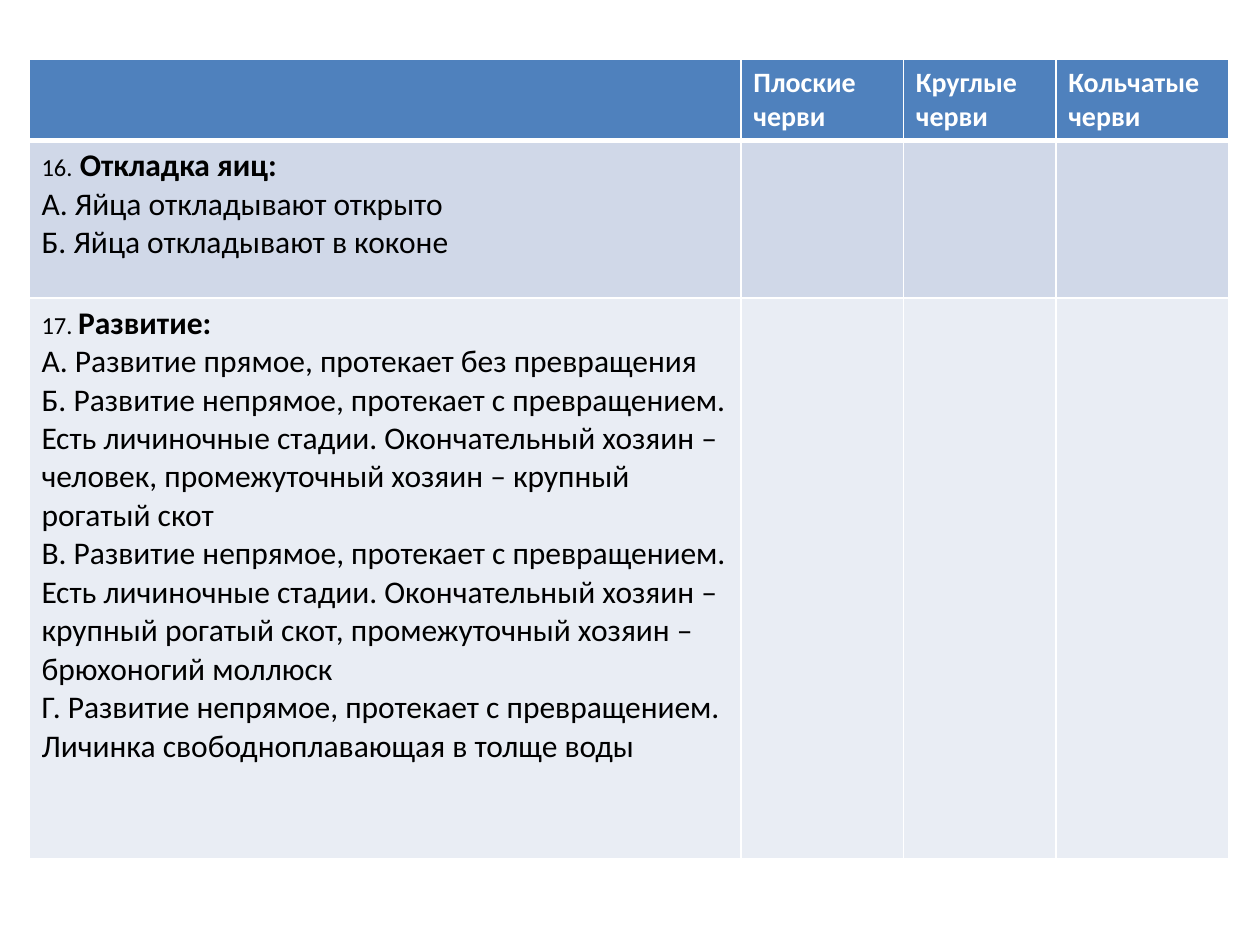
import pptx
import pptx.dml.color
import pptx.oxml
import pptx.oxml.ns
import pptx.util
from pptx.util import Inches


def colour(hex_code):
    return pptx.dml.color.RGBColor.from_string(hex_code)


class WormSlide:
    FONT = "Calibri"
    WHITE, BLACK = "FFFFFF", "000000"
    HEADER, ODD_BAND, EVEN_BAND = "4F81BD", "D0D8E8", "E9EDF4"

    def __init__(self, presentation):
        self.slide = presentation.slides.add_slide(presentation.slide_layouts[6])

    def table(self, left, top, widths, heights):
        grid = self.slide.shapes.add_table(
            len(heights), len(widths), Inches(left), Inches(top),
            Inches(sum(widths)), Inches(sum(heights))).table
        for column, width in zip(grid.columns, widths):
            column.width = Inches(width)
        for row, height in zip(grid.rows, heights):
            row.height = Inches(height)
        return grid

    def border(self, cell, side, points):
        cell._tc.get_or_add_tcPr().append(pptx.oxml.parse_xml(
            f'<a:ln{side} {pptx.oxml.ns.nsdecls("a")} w="{pptx.util.Pt(points)}">'
            f'<a:solidFill><a:srgbClr val="{self.WHITE}"/></a:solidFill></a:ln{side}>'))

    def cell(self, cell, fill, borders, paragraphs, text_colour):
        # Borders come before the fill in the cell properties
        for side, points in borders.items():
            self.border(cell, side, points)
        cell.fill.solid()
        cell.fill.fore_color.rgb = colour(fill)
        frame = cell.text_frame
        for index, runs in enumerate(paragraphs):
            paragraph = frame.add_paragraph() if index else frame.paragraphs[0]
            for text, size, bold in runs:
                run = paragraph.add_run()
                run.text = text
                run.font.name = self.FONT
                run.font.size = pptx.util.Pt(size)
                run.font.bold = bold
                run.font.color.rgb = colour(text_colour)


def question(heading, answers):
    return [heading] + [[(answer, 18, False)] for answer in answers]


def main():
    presentation = pptx.Presentation()
    presentation.slide_width = Inches(10)
    presentation.slide_height = Inches(7.5)
    worms = WormSlide(presentation)

    # Header: one column for each type of worm
    worm_types = ["Плоские", "Круглые", "Кольчатые"]
    header = [[]] + [[[(word, 16, True)] for word in (worm_type, "черви")]
                     for worm_type in worm_types]

    # Questions with their answer options
    egg_laying = question(
        [("16.", 14, False), (" Откладка яиц:", 18, True)],
        ["А. Яйца откладывают открыто",
         "Б. Яйца откладывают в коконе"])
    development = question(
        [("17. ", 14, False), ("Развитие:", 18, True)],
        ["А. Развитие прямое, протекает без превращения",
         "Б. Развитие непрямое, протекает с превращением. Есть личиночные стадии. "
         "Окончательный хозяин – человек, промежуточный хозяин – крупный рогатый скот",
         "В. Развитие непрямое, протекает с превращением. Есть личиночные стадии. "
         "Окончательный хозяин – крупный рогатый скот, промежуточный хозяин – "
         "брюхоногий моллюск",
         "Г. Развитие непрямое, протекает с превращением. "
         "Личинка свободноплавающая в толще воды"])
    no_answers = [[] for _ in worm_types]

    # Table, with a thick line under the header
    grid = worms.table(0.23, 0.47, [5.65, 1.29, 1.21, 1.37], [0.63, 1.25, 4.45])
    rows = [
        (header, worms.HEADER, worms.WHITE, 1, 3),
        ([egg_laying] + no_answers, worms.ODD_BAND, worms.BLACK, 3, 1),
        ([development] + no_answers, worms.EVEN_BAND, worms.BLACK, 1, 1),
    ]
    for row, (contents, fill, text_colour, top, bottom) in zip(grid.rows, rows):
        borders = {"L": 1, "R": 1, "T": top, "B": bottom}
        for cell, paragraphs in zip(row.cells, contents):
            worms.cell(cell, fill, borders, paragraphs, text_colour)

    presentation.save("out.pptx")


if __name__ == "__main__":
    main()
